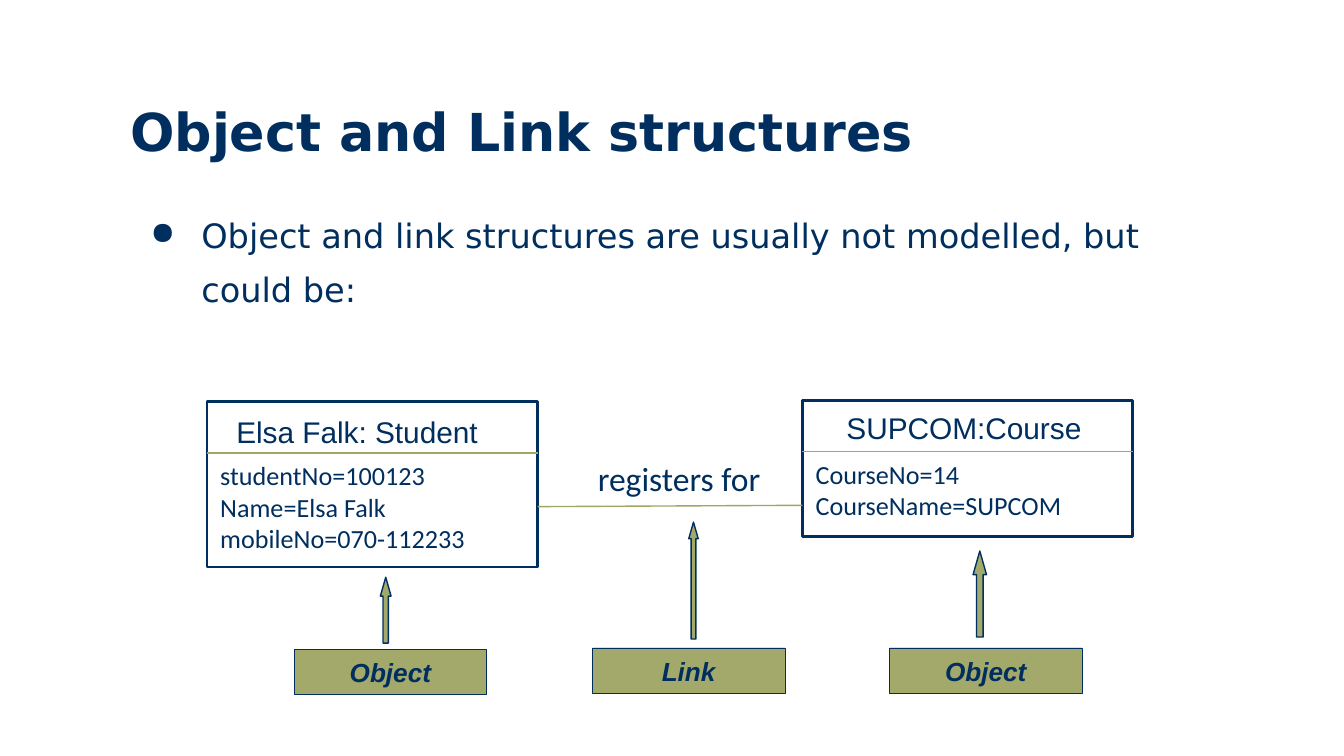
import pptx
import pptx.util
from dataclasses import dataclass
from lxml import etree
from pptx.dml.color import RGBColor
from pptx.enum.shapes import MSO_CONNECTOR, MSO_SHAPE
from pptx.enum.text import MSO_ANCHOR, PP_ALIGN
from pptx.oxml.ns import qn
from pptx.util import Inches, Pt


@dataclass(frozen=True)
class Theme:
    navy: RGBColor = RGBColor(0x00, 0x2F, 0x5F)
    white: RGBColor = RGBColor(0xFF, 0xFF, 0xFF)
    olive: RGBColor = RGBColor(0xA3, 0xA8, 0x6B)
    rule: RGBColor = RGBColor(0xA1, 0xA6, 0x67)
    title_size: int = 28
    body_size: int = 18
    name_size: int = 16
    detail_size: int = 14
    heading_font: str = "DejaVu Sans"
    name_font: str = "Arial"
    detail_font: str = "Calibri"


THEME = Theme()
BOX_WIDTH = 2.46


def apply_format(target, values):
    for attribute, value in values.items():
        setattr(target, attribute, value)


def write_lines(frame, lines, font, size, **extras):
    apply_format(frame, {"word_wrap": True, "vertical_anchor": MSO_ANCHOR.TOP})
    frame.text = "\n".join(lines)
    for paragraph in frame.paragraphs:
        for run in paragraph.runs:
            apply_format(run.font, {"name": font, "size": Pt(size), **extras})
            run.font.color.rgb = THEME.navy


def add_text(slide, place, lines, font, size):
    box = slide.shapes.add_textbox(*map(Inches, place))
    write_lines(box.text_frame, lines, font, size)
    return box.text_frame


def add_filled(slide, preset, place, fill, line_width):
    shape = slide.shapes.add_shape(preset, *map(Inches, place))
    shape.shadow.inherit = False
    shape.fill.solid()
    shape.fill.fore_color.rgb = fill
    shape.line.color.rgb = THEME.navy
    shape.line.width = Pt(line_width)
    return shape


def add_rule(slide, start, end):
    rule = slide.shapes.add_connector(
        MSO_CONNECTOR.STRAIGHT, *map(Inches, (*start, *end)))
    rule.line.color.rgb = THEME.rule
    rule.line.width = Pt(0.75)
    etree.SubElement(rule._element.spPr, qn("a:effectLst"))


def add_title(slide, text):
    title = slide.shapes.title
    apply_format(title, {"left": Inches(0.87), "top": Inches(0.69),
                         "width": Inches(7.49), "height": Inches(0.65)})
    write_lines(title.text_frame, [text], THEME.heading_font, THEME.title_size,
                bold=True)
    title.text_frame.paragraphs[0].alignment = PP_ALIGN.LEFT


def add_bullet(slide, text):
    frame = add_text(slide, (1.02, 1.45, 7.97, 3.54), [text],
                     THEME.heading_font, THEME.body_size)
    paragraph = frame.paragraphs[0]
    properties = paragraph._p.get_or_add_pPr()
    properties.set("marL", str(Inches(0.38)))
    properties.set("indent", str(-Inches(0.38)))
    etree.SubElement(properties, qn("a:buSzPct"), val="93000")
    etree.SubElement(properties, qn("a:buChar"), char="●")
    paragraph.line_spacing = Pt(29)


def add_object(slide, left, top, height, divider, name, name_place, attributes):
    """Draw an instance box with its name above the divider, attributes below."""
    add_filled(slide, MSO_SHAPE.RECTANGLE, (left, top, BOX_WIDTH, height),
               THEME.white, 1.5)
    add_text(slide, name_place, [name], THEME.name_font, THEME.name_size)
    add_rule(slide, (left, divider), (left + BOX_WIDTH, divider))
    add_text(slide, (left, divider, BOX_WIDTH, 0.81), attributes,
             THEME.detail_font, THEME.detail_size)


def add_callout(slide, text, left, top):
    label = add_filled(slide, MSO_SHAPE.RECTANGLE, (left, top, 1.43, 0.34),
                       THEME.olive, 0.25)
    write_lines(label.text_frame, [text], THEME.name_font, THEME.detail_size,
                bold=True, italic=True)
    label.text_frame.vertical_anchor = MSO_ANCHOR.MIDDLE
    label.text_frame.paragraphs[0].alignment = PP_ALIGN.CENTER


def add_pointer(slide, center_x, center_y, length, thickness):
    """Draw a left arrow turned to point upwards."""
    place = (center_x - length / 2, center_y - thickness / 2, length, thickness)
    arrow = add_filled(slide, MSO_SHAPE.LEFT_ARROW, place, THEME.olive, 0.75)
    arrow.rotation = 90
    arrow.adjustments[0] = 0.5
    arrow.adjustments[1] = 1.76


def main():
    deck = pptx.Presentation()
    deck.slide_width = Inches(10)
    deck.slide_height = deck.slide_width * 9 // 16
    slide = deck.slides.add_slide(deck.slide_layouts.get_by_name("Title Only"))

    add_title(slide, "Object and Link structures")
    add_bullet(slide, "Object and link structures are usually not modelled, "
                      "but could be:")

    add_object(slide, 1.54, 2.99, 1.23, 3.37, "Elsa Falk: Student",
               (1.66, 3.03, 2.67, 0.37),
               ["studentNo=100123", "Name=Elsa Falk", "mobileNo=070-112233"])
    add_object(slide, 5.97, 2.98, 1.01, 3.36, "SUPCOM:Course",
               (6.2, 3, 2.4, 0.37), ["CourseNo=14", "CourseName=SUPCOM"])

    add_rule(slide, (4, 3.77), (5.97, 3.76))
    add_text(slide, (4.35, 3.36, 1.96, 0.4), ["registers for"],
             THEME.detail_font, THEME.body_size)

    callouts = [
        ("Object", (2.19, 4.83), (2.87, 4.54, 0.49, 0.08)),
        ("Link", (4.41, 4.82), (5.16, 4.32, 0.87, 0.07)),
        ("Object", (6.62, 4.82), (7.29, 4.42, 0.64, 0.1)),
    ]
    for text, corner, pointer in callouts:
        add_callout(slide, text, *corner)
        add_pointer(slide, *pointer)

    deck.save("out.pptx")


if __name__ == "__main__":
    main()
